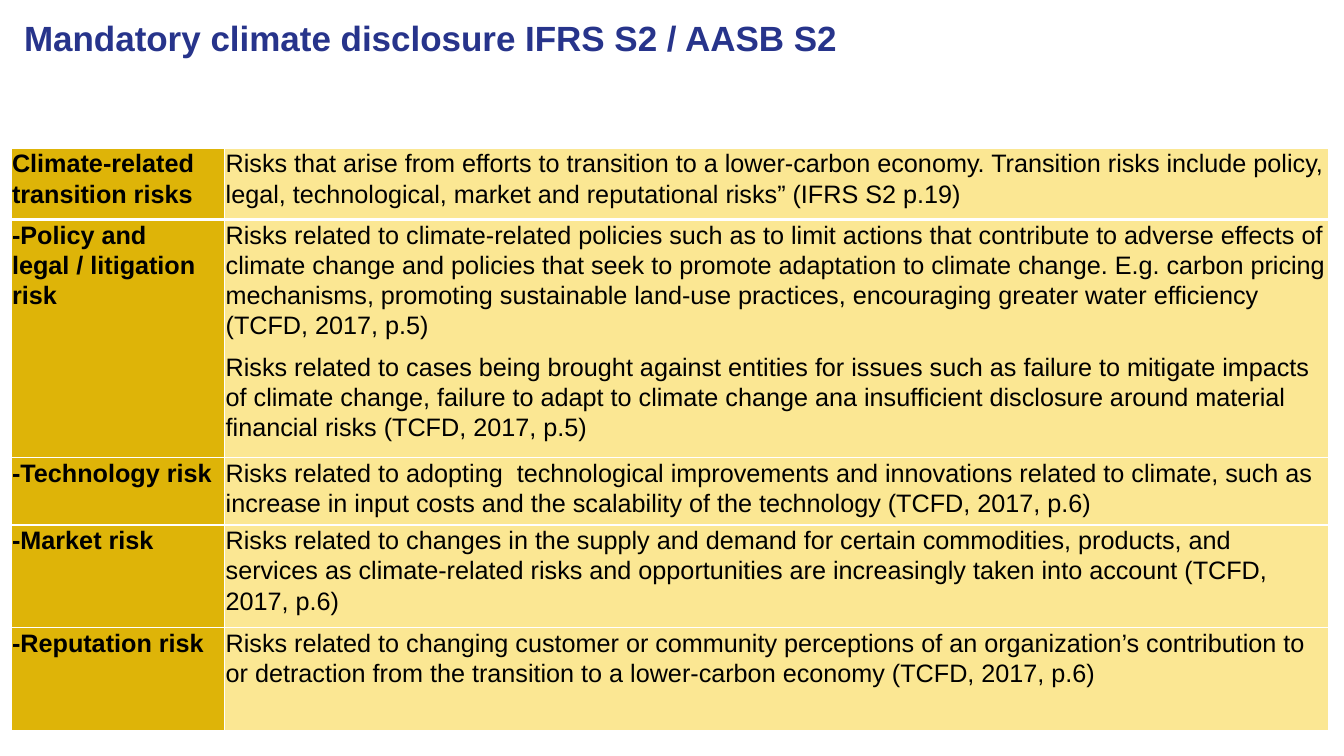
from dataclasses import dataclass

from lxml.etree import SubElement
from pptx import Presentation
from pptx.dml.color import RGBColor as Rgb
from pptx.enum.text import MSO_ANCHOR as Anchor, PP_ALIGN as Align
from pptx.oxml.ns import qn
from pptx.util import Pt

HUES = {"title": "27348B", "text": "000000", "label": "DEB408",
        "detail": "FBE793", "rule": "FFFFFF"}
WIDTHS = (152.6, 788.4)
THIN, THICK = 1, 3


@dataclass
class Risk:
    name: str
    notes: tuple[str, ...]
    height: float


RISKS = (
    Risk("Climate-related transition risks", (
        "Risks that arise from efforts to transition to a lower-carbon economy. "
        "Transition risks include policy, legal, technological, market and "
        "reputational risks” (IFRS S2 p.19)",), 51.1),
    Risk("-Policy and legal / litigation risk", (
        "Risks related to climate-related policies such as to limit actions that "
        "contribute to adverse effects of climate change and policies that seek to "
        "promote adaptation to climate change. E.g. carbon pricing mechanisms, "
        "promoting sustainable land-use practices, encouraging greater water "
        "efficiency (TCFD, 2017, p.5)",
        "Risks related to cases being brought against entities for issues such as "
        "failure to mitigate impacts of climate change, failure to adapt to climate "
        "change ana insufficient disclosure around material financial risks "
        "(TCFD, 2017, p.5)"), 169.9),
    Risk("-Technology risk", (
        "Risks related to adopting  technological improvements and innovations "
        "related to climate, such as increase in input costs and the scalability of "
        "the technology (TCFD, 2017, p.6)",), 48.2),
    Risk("-Market risk", (
        "Risks related to changes in the supply and demand for certain commodities, "
        "products, and services as climate-related risks and opportunities are "
        "increasingly taken into account (TCFD, 2017, p.6)",), 73.4),
    Risk("-Reputation risk", (
        "Risks related to changing customer or community perceptions of an "
        "organization’s contribution to or detraction from the transition to a "
        "lower-carbon economy (TCFD, 2017, p.6)",), 73.4),
)


def write(frame, *texts: str, size: float = 18, hue: str = "text",
          bold: bool = False, lead: float = 1, after: float = 0) -> None:
    frame.word_wrap = True
    for i, text in enumerate(texts):
        para = frame.add_paragraph() if i else frame.paragraphs[0]
        para.alignment = Align.LEFT
        para.line_spacing = lead
        para.space_before, para.space_after = Pt(0), Pt(after)
        run = para.add_run()
        run.text = text
        font = run.font
        font.name, font.size, font.bold = "Arial", Pt(size), bold
        font.color.rgb = Rgb.from_string(HUES[hue])


def edge(cell, top: float, base: float) -> None:
    """Rule all four sides; must run before the cell gets its fill."""
    props = cell._tc.get_or_add_tcPr()
    sides = {"lnL": THIN, "lnR": THIN, "lnT": top, "lnB": base}
    for tag, width in sides.items():
        line = SubElement(props, qn(f"a:{tag}"), w=str(Pt(width)))
        fill = SubElement(line, qn("a:solidFill"))
        SubElement(fill, qn("a:srgbClr"), val=HUES["rule"])


def fill_cell(cell, texts: tuple[str, ...], hue: str, bold: bool,
              top: float, base: float) -> None:
    edge(cell, top, base)
    cell.fill.solid()
    cell.fill.fore_color.rgb = Rgb.from_string(HUES[hue])
    cell.margin_left = cell.margin_right = Pt(0.72)
    cell.margin_top = cell.margin_bottom = Pt(0)
    cell.vertical_anchor = Anchor.TOP
    write(cell.text_frame, *texts, bold=bold, lead=1.07, after=8)


def add_title(slide) -> None:
    title = slide.shapes.title
    title.left, title.top = Pt(10), Pt(8)
    title.width, title.height = Pt(702), Pt(64)
    title.text_frame.vertical_anchor = Anchor.TOP
    write(title.text_frame, "Mandatory climate disclosure IFRS S2 / AASB S2",
          size=25, hue="title", bold=True)


def add_risks(slide) -> None:
    high = sum(risk.height for risk in RISKS)
    table = slide.shapes.add_table(
        len(RISKS), len(WIDTHS), Pt(7.9), Pt(105.8), Pt(sum(WIDTHS)), Pt(high)).table
    for col, width in zip(table.columns, WIDTHS):
        col.width = Pt(width)
    for i, risk in enumerate(RISKS):
        table.rows[i].height = Pt(risk.height)
        top = THICK if i == 1 else THIN
        base = THICK if i == 0 else THIN
        fill_cell(table.cell(i, 0), (risk.name,), "label", True, top, base)
        fill_cell(table.cell(i, 1), risk.notes, "detail", False, top, base)


def main() -> None:
    deck = Presentation()
    deck.slide_width, deck.slide_height = Pt(960), Pt(540)
    slide = deck.slides.add_slide(deck.slide_layouts[5])
    add_title(slide)
    add_risks(slide)
    deck.save("out.pptx")


if __name__ == "__main__":
    main()
